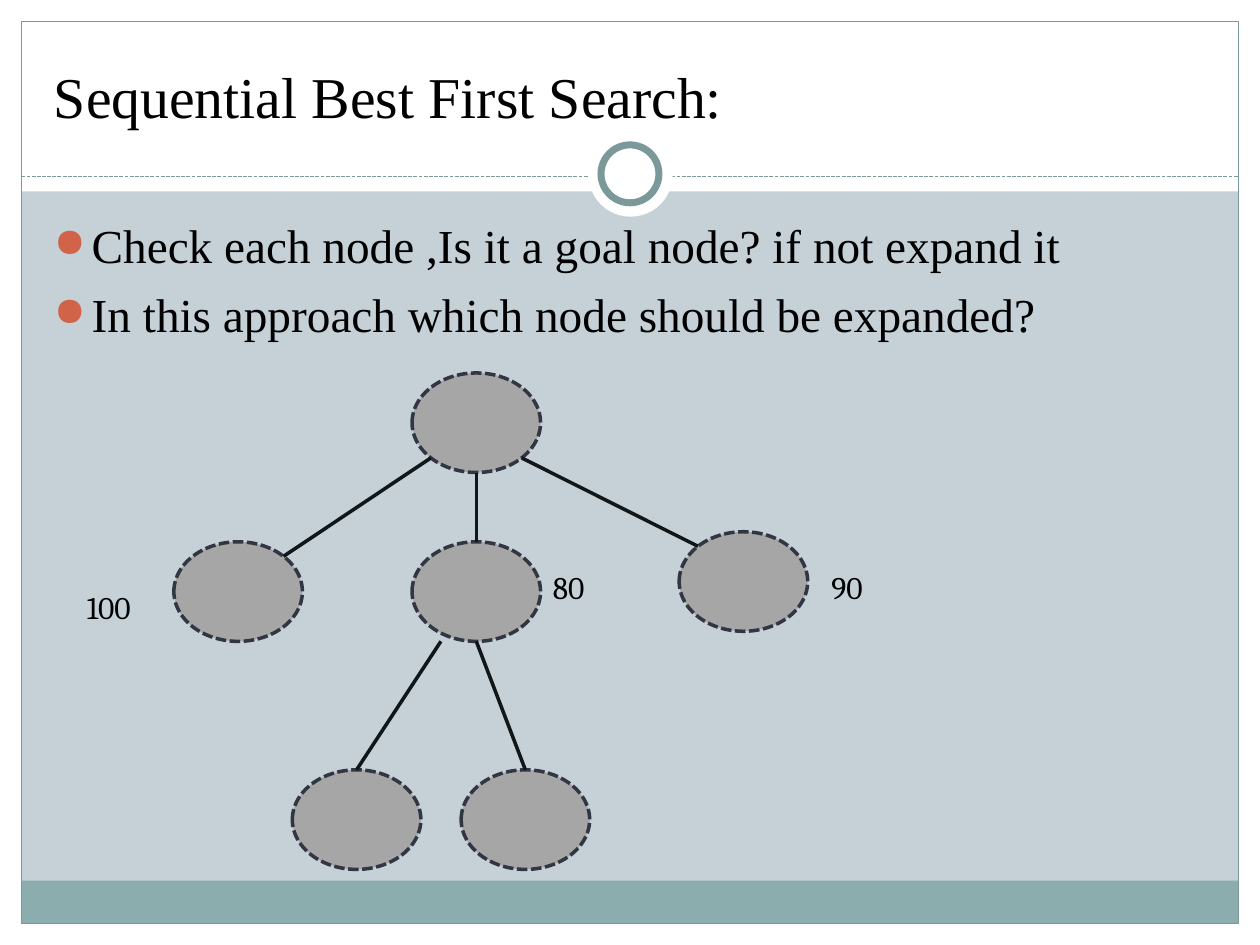
from dataclasses import dataclass
from math import sqrt

from lxml.etree import SubElement
from pptx import Presentation
from pptx.dml.color import RGBColor
from pptx.enum.dml import MSO_LINE
from pptx.enum.shapes import MSO_CONNECTOR, MSO_SHAPE
from pptx.enum.text import MSO_ANCHOR
from pptx.oxml.ns import qn
from pptx.util import Inches, Pt


@dataclass(frozen=True)
class Theme:
    background: RGBColor = RGBColor.from_string("C5D1D7")
    paper: RGBColor = RGBColor.from_string("FFFFFF")
    footer: RGBColor = RGBColor.from_string("8CADAE")
    frame: RGBColor = RGBColor.from_string("7C999A")
    node: RGBColor = RGBColor.from_string("A6A6A6")
    node_edge: RGBColor = RGBColor.from_string("323643")
    branch: RGBColor = RGBColor.from_string("111618")
    text: RGBColor = RGBColor.from_string("000000")
    bullet: str = "D16349"
    title_size: int = 33
    body_size: int = 27
    cost_size: int = 18
    text_font: str = "Times New Roman"
    cost_font: str = "Cambria"


theme = Theme()
presentation = Presentation()
presentation.slide_width, presentation.slide_height = Inches(10), Inches(7.5)
slide = presentation.slides.add_slide(presentation.slide_layouts[6])
slide.background.fill.solid()
slide.background.fill.fore_color.rgb = theme.background


def add_filled(kind, box, fill=None, line=None, width=0.75):
    shape = slide.shapes.add_shape(kind, *map(Inches, box))
    shape.shadow.inherit = False
    if fill is None:
        shape.fill.background()
    else:
        shape.fill.solid()
        shape.fill.fore_color.rgb = fill
    if line is None:
        shape.line.fill.background()
    else:
        shape.line.color.rgb = line
        shape.line.width = Pt(width)
    return shape


def add_line(start, end, color, width):
    line = slide.shapes.add_connector(
        MSO_CONNECTOR.STRAIGHT, *map(Inches, (*start, *end)))
    line.line.color.rgb = color
    line.line.width = Pt(width)
    SubElement(line._element.spPr, qn("a:effectLst"))
    return line


# Frame: white margins, footer band, outline, divider and ring
margin = 0.17
for edge in [(0, 7.5 - margin, 10, margin), (0, 0, 10, 1.52),
             (0, 0, margin, 7.5), (10 - margin, 0, margin, 7.5)]:
    add_filled(MSO_SHAPE.RECTANGLE, edge, theme.paper)
add_filled(MSO_SHAPE.RECTANGLE, (margin, 6.99, 10 - 2 * margin, 0.34), theme.footer)
add_filled(MSO_SHAPE.RECTANGLE, (margin, margin, 10 - 2 * margin, 7.5 - 2 * margin),
           line=theme.frame)
divider = add_line((margin, 1.4), (10 - margin, 1.4), theme.frame, 0.75)
divider.line.dash_style = MSO_LINE.SQUARE_DOT
add_filled(MSO_SHAPE.OVAL, (4.67, 1.05, 0.67, 0.67), theme.paper)
add_filled(MSO_SHAPE.OVAL, (4.77, 1.15, 0.46, 0.46), theme.paper, theme.frame, 4)

# Title, bullets and node costs
texts = [
    ((0.33, 0.25, 9.33, 0.83), ["Sequential Best First Search:"],
     theme.text_font, theme.title_size, MSO_ANCHOR.BOTTOM, False),
    ((0.33, 1.67, 9.3, 1.2),
     ["Check each node ,Is it a goal node? if not expand it",
      "In this approach which node should be expanded?"],
     theme.text_font, theme.body_size, MSO_ANCHOR.TOP, True),
]
for left, top, cost in [(0.59, 4.62, "100"), (4.29, 4.46, "80"), (6.5, 4.46, "90")]:
    texts.append(((left, top, 0.71, 0.4), [cost],
                  theme.cost_font, theme.cost_size, MSO_ANCHOR.TOP, False))

for box, lines, font, size, anchor, bulleted in texts:
    frame = slide.shapes.add_textbox(*map(Inches, box)).text_frame
    frame.word_wrap = True
    frame.vertical_anchor = anchor
    frame.text = "\n".join(lines)
    for paragraph in frame.paragraphs:
        paragraph.font.name = font
        paragraph.font.size = Pt(size)
        paragraph.font.color.rgb = theme.text
        if bulleted:
            paragraph.space_before = Pt(7)
            properties = paragraph._p.get_or_add_pPr()
            properties.set("marL", str(Inches(0.3)))
            properties.set("indent", str(-Inches(0.3)))
            bullet_color = SubElement(properties, qn("a:buClr"))
            SubElement(bullet_color, qn("a:srgbClr"), val=theme.bullet)
            SubElement(properties, qn("a:buSzPct"), val="85000")
            SubElement(properties, qn("a:buChar"), char="●")

# Search tree: node centres, and branches between points on their outlines
node_width, node_height = 1.02, 0.79
nodes = {
    "root": (3.78, 3.355),
    "left": (1.89, 4.695),
    "middle": (3.78, 4.695),
    "right": (5.9, 4.615),
    "left leaf": (2.83, 6.505),
    "right leaf": (4.17, 6.505),
}
for x, y in nodes.values():
    node = add_filled(
        MSO_SHAPE.OVAL,
        (x - node_width / 2, y - node_height / 2, node_width, node_height),
        theme.node, theme.node_edge, 2)
    node.line.dash_style = MSO_LINE.SQUARE_DOT

diagonal = sqrt(0.5)
top, bottom = (0, -1), (0, 1)
branches = [
    ("root", (-diagonal, diagonal), "left", (diagonal, -diagonal)),
    ("root", bottom, "middle", top),
    ("root", (diagonal, diagonal), "right", (-diagonal, -diagonal)),
    ("middle", (-0.55, 1), "left leaf", top),
    ("middle", bottom, "right leaf", top),
]
for parent, leaving, child, entering in branches:
    start, end = [
        (nodes[name][0] + dx * node_width / 2, nodes[name][1] + dy * node_height / 2)
        for name, (dx, dy) in ((parent, leaving), (child, entering))]
    add_line(start, end, theme.branch, 2)

presentation.save("out.pptx")
